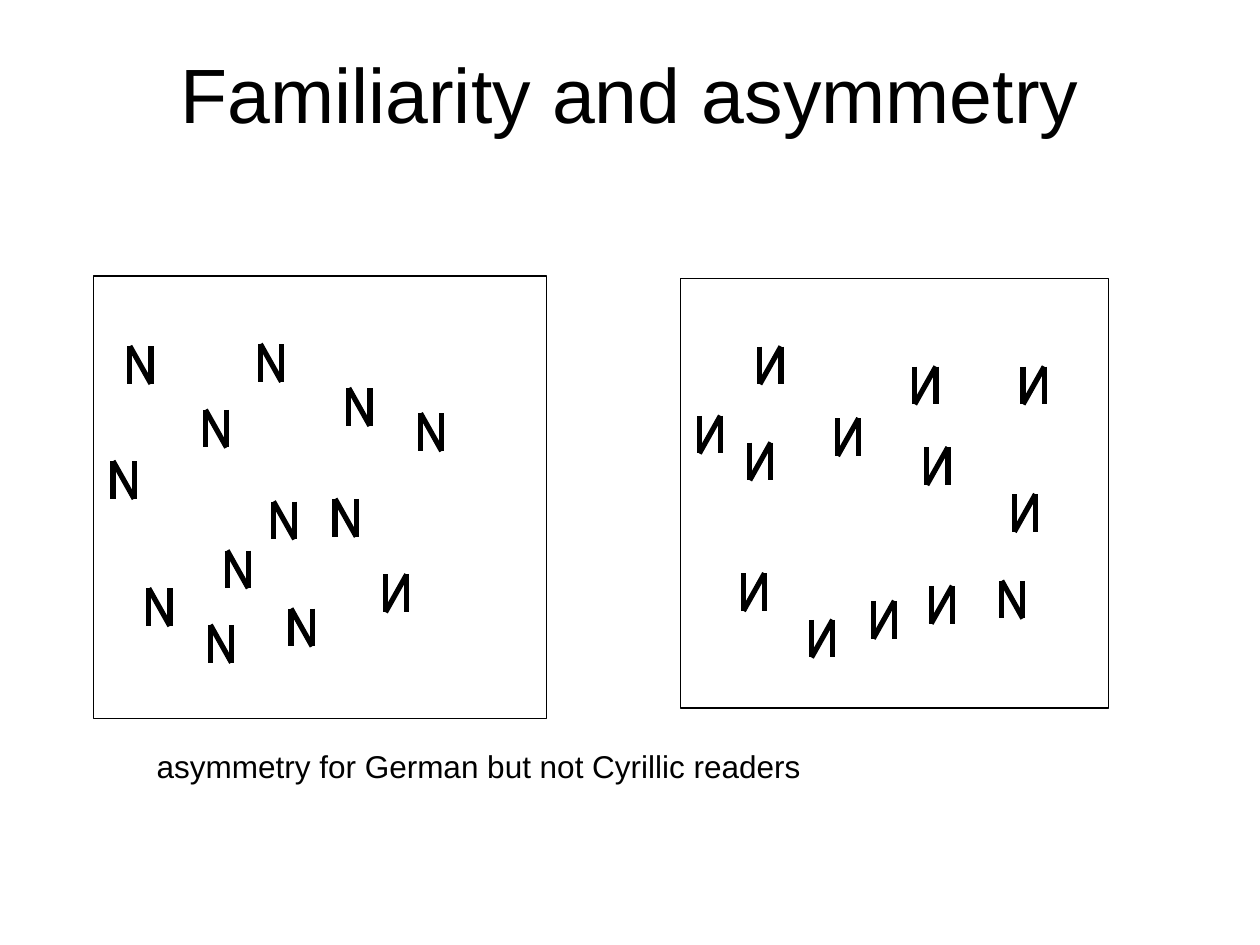
from typing import NamedTuple

from lxml import etree
from pptx import Presentation
from pptx.dml.color import RGBColor
from pptx.enum import shapes, text
from pptx.oxml import ns
from pptx.util import Pt

INK, PAPER = "000000", "FFFFFF"
WIDE, TALL = 12.1, 21.5  # size of one letter


class Box(NamedTuple):
    left: float
    top: float
    width: float
    height: float


class Letter(NamedTuple):
    left: float
    top: float
    mirror: bool = False


class Panel(NamedTuple):
    frame: Box
    letters: list[Letter]


LEFT = Panel(Box(53.3, 157.7, 259.2, 252.7), [
    Letter(74.2, 197.8), Letter(117.4, 234.2), Letter(120.2, 357.1),
    Letter(64.6, 263.5), Letter(148.8, 196.6), Letter(166.3, 347.8),
    Letter(191.5, 285.1), Letter(199.3, 221.8), Letter(220.3, 328.3, True),
    Letter(129.8, 314.6), Letter(156.3, 286.6), Letter(85, 336.2),
    Letter(240.3, 236.2),
])
RIGHT = Panel(Box(388.8, 159.1, 244.8, 245.5), [
    Letter(434.2, 198, True), Letter(478.6, 239, True),
    Letter(463.7, 354.2, True), Letter(522.7, 209.5, True),
    Letter(532.1, 334.8, True), Letter(579.6, 282.4, True),
    Letter(399.6, 237.6, True), Letter(428.4, 252.9, True),
    Letter(424.8, 327.6, True), Letter(584.6, 209.5, True),
    Letter(499, 343.4, True), Letter(529.6, 255.6, True),
    Letter(572.4, 331.9),
])


def color(code: str) -> RGBColor:
    return RGBColor.from_string(code)


def points(box: Box) -> list[Pt]:
    return [Pt(side) for side in box]


def add_text(slide, words: str, box: Box, *, size: float, indent: float = 7.2,
             align=text.PP_ALIGN.LEFT, anchor=text.MSO_ANCHOR.TOP) -> None:
    frame = slide.shapes.add_textbox(*points(box)).text_frame
    frame.word_wrap = True
    frame.margin_left = Pt(indent)
    frame.vertical_anchor = anchor
    para = frame.paragraphs[0]
    para.alignment = align
    run = para.add_run()
    run.text = words
    run.font.name, run.font.size = "Arial", Pt(size)
    run.font.color.rgb = color(INK)


def add_frame(slide, box: Box) -> None:
    rect = slide.shapes.add_shape(shapes.MSO_SHAPE.RECTANGLE, *points(box))
    rect.shadow.inherit = False
    rect.fill.solid()
    rect.fill.fore_color.rgb = color(PAPER)
    rect.line.color.rgb = color(INK)
    rect.line.width = Pt(0.75)


def add_stroke(group, x1: float, y1: float, x2: float, y2: float) -> None:
    line = group.shapes.add_connector(
        shapes.MSO_CONNECTOR.STRAIGHT, Pt(x1), Pt(y1), Pt(x2), Pt(y2))
    line.line.color.rgb = color(INK)
    line.line.width = Pt(3)
    etree.SubElement(line._element.spPr, ns.qn("a:effectLst"))


def add_letter(slide, letter: Letter) -> None:
    """Draw an N, or its mirror image, as a group of three strokes."""
    group = slide.shapes.add_group_shape()
    left, top = letter.left, letter.top
    right, base = left + WIDE, top + TALL
    start, end = (right, left) if letter.mirror else (left, right)
    for x1, x2 in ((left, left), (right, right), (start, end)):
        add_stroke(group, x1, top, x2, base)


def main() -> None:
    deck = Presentation()
    deck.slide_width, deck.slide_height = Pt(720), Pt(540)
    slide = deck.slides.add_slide(deck.slide_layouts[6])
    add_text(slide, "Familiarity and asymmetry", Box(54, 22.3, 612, 61.2),
             size=44, align=text.PP_ALIGN.CENTER,
             anchor=text.MSO_ANCHOR.MIDDLE)
    for panel in (LEFT, RIGHT):
        add_frame(slide, panel.frame)
        for letter in panel.letters:
            add_letter(slide, letter)
    add_text(slide, "asymmetry for German but not Cyrillic readers",
             Box(22.3, 423.4, 697.7, 98.6), size=18, indent=67.2)
    deck.save("out.pptx")


if __name__ == "__main__":
    main()
